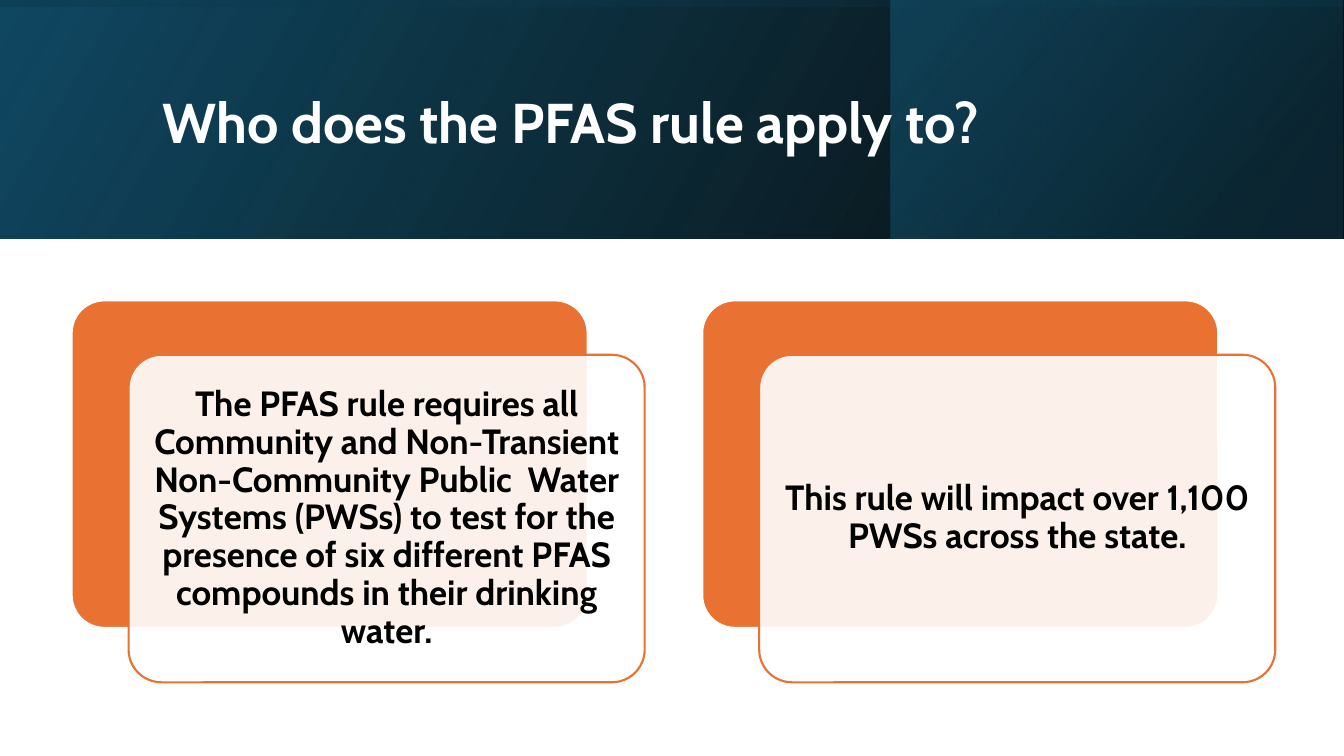
"""Build the slide on who the PFAS rule applies to."""
from dataclasses import dataclass

from lxml import etree
from pptx import Presentation, util as u
from pptx.dml.color import RGBColor
from pptx.enum import shapes, text
from pptx.oxml.ns import qn

SLIDE_W, SLIDE_H = u.Inches(13.33), u.Inches(7.5)


@dataclass(frozen=True)
class Theme:
    """Colours, font and type sizes."""
    white: str = "FFFFFF"
    black: str = "000000"
    navy: str = "104862"
    deep_teal: str = "0B3041"
    teal: str = "156082"
    orange: str = "E97132"
    font: str = "Cabin"
    title_size: float = 40
    card_size: float = 25
    outline: float = 1.5


THEME = Theme()


@dataclass(frozen=True)
class Box:
    """A place given in percent of the slide's width and height."""
    left: float
    top: float
    width: float
    height: float

    def lengths(self) -> list[int]:
        """Return left, top, width and height as slide lengths."""
        return [int(share * side / 100) for share, side in zip(
            (self.left, self.top, self.width, self.height), (SLIDE_W, SLIDE_H) * 2)]


@dataclass(frozen=True)
class Stop:
    """A gradient stop, with position and opacity in percent."""
    position: float
    colour: str
    opacity: float


@dataclass(frozen=True)
class Band:
    """A mirrored gradient layer of the header."""
    box: Box
    stops: tuple[Stop, Stop]
    angle: float
    turned: bool = False


HEADER_H = 31.6
HEADER = Box(0, 0, 100, HEADER_H)
BANDS = (
    Band(HEADER, (Stop(0, THEME.black, 96), Stop(100, THEME.navy, 100)), 30),
    Band(Box(66.3, 0, 33.6, HEADER_H),
         (Stop(19, THEME.deep_teal, 68), Stop(100, THEME.teal, 48)), 40),
    Band(HEADER, (Stop(23, THEME.navy, 16), Stop(99, THEME.black, 45)), 10, turned=True),
)
TITLE = "Who does the PFAS rule apply to?"
TITLE_BOX = Box(11.33, 5.07, 79.74, 22.93)
CARDS = (
    "The PFAS rule requires all Community and Non-Transient Non-Community Public  Water "
    "Systems (PWSs) to test for the presence of six different PFAS compounds in their "
    "drinking water.",
    "This rule will impact over 1,100 PWSs across the state.",
)
CARD = Box(5.33, 39.73, 38.4, 43.33)
CARD_PITCH = 46.92
FRONT_SHIFT = (4.24, 7.2)


def set_opacity(colour_holder, percent: float) -> None:
    """Set the opacity of the colour inside an XML element."""
    for colour in colour_holder.iter(qn("a:srgbClr")):
        etree.SubElement(colour, qn("a:alpha"), val=str(int(percent * 1000)))


def write(frame, wording: str, size: float, colour: str, align) -> None:
    """Write one bold paragraph, centred vertically."""
    for name, value in {"text": wording, "word_wrap": True,
                        "vertical_anchor": text.MSO_ANCHOR.MIDDLE}.items():
        setattr(frame, name, value)
    paragraph = frame.paragraphs[0]
    for name, value in {"alignment": align, "line_spacing": 0.9}.items():
        setattr(paragraph, name, value)
    font = paragraph.runs[0].font
    for name, value in {"name": THEME.font, "size": u.Pt(size), "bold": True}.items():
        setattr(font, name, value)
    font.color.rgb = RGBColor.from_string(colour)


def draw_band(slide, band: Band) -> None:
    """Draw one header layer."""
    left, top, width, height = band.box.lengths()
    if band.turned:
        left, top = left + (width - height) // 2, top + (height - width) // 2
        width, height = height, width
    layer = slide.shapes.add_shape(shapes.MSO_SHAPE.RECTANGLE, left, top, width, height)
    layer.shadow.inherit = False
    layer.rotation = 270 if band.turned else 0
    layer.element.spPr.xfrm.set("flipH", "1")
    layer.line.fill.background()
    layer.fill.gradient()
    layer.fill.gradient_angle = band.angle
    tags = layer.element.spPr.iter(qn("a:gs"))
    for tag, gradient_stop, stop in zip(tags, layer.fill.gradient_stops, band.stops):
        gradient_stop.position = stop.position / 100
        gradient_stop.color.rgb = RGBColor.from_string(stop.colour)
        set_opacity(tag, stop.opacity)


def draw_panel(slide, box: Box, fill: str, line: str):
    """Draw one rounded panel of a card."""
    panel = slide.shapes.add_shape(shapes.MSO_SHAPE.ROUNDED_RECTANGLE, *box.lengths())
    panel.shadow.inherit = False
    panel.adjustments[0] = 0.1
    panel.fill.solid()
    panel.fill.fore_color.rgb = RGBColor.from_string(fill)
    panel.line.color.rgb = RGBColor.from_string(line)
    panel.line.width = u.Pt(THEME.outline)
    return panel


def draw_card(slide, column: int, wording: str) -> None:
    """Draw an orange panel with a translucent text panel shifted over it."""
    left = CARD.left + column * CARD_PITCH
    draw_panel(slide, Box(left, CARD.top, CARD.width, CARD.height), THEME.orange, THEME.white)
    shift_x, shift_y = FRONT_SHIFT
    front = draw_panel(slide, Box(left + shift_x, CARD.top + shift_y, CARD.width, CARD.height),
                       THEME.white, THEME.orange)
    set_opacity(front.element.spPr.find(qn("a:solidFill")), 90)
    frame = front.text_frame
    for side in ("left", "top", "right", "bottom"):
        setattr(frame, f"margin_{side}", u.Inches(0.1))
    write(frame, wording, THEME.card_size, THEME.black, text.PP_ALIGN.CENTER)


def place_title(slide) -> None:
    """Move the title over the header and format it."""
    title = slide.shapes.title
    title.element.getparent().append(title.element)
    for name, value in zip(("left", "top", "width", "height"), TITLE_BOX.lengths()):
        setattr(title, name, value)
    write(title.text_frame, TITLE, THEME.title_size, THEME.white, text.PP_ALIGN.LEFT)


def main() -> None:
    """Build and save the slide."""
    deck = Presentation()
    deck.slide_width, deck.slide_height = SLIDE_W, SLIDE_H
    slide = deck.slides.add_slide(deck.slide_layouts.get_by_name("Title Only"))
    for band in BANDS:
        draw_band(slide, band)
    place_title(slide)
    for column, wording in enumerate(CARDS):
        draw_card(slide, column, wording)
    deck.save("out.pptx")


if __name__ == "__main__":
    main()
